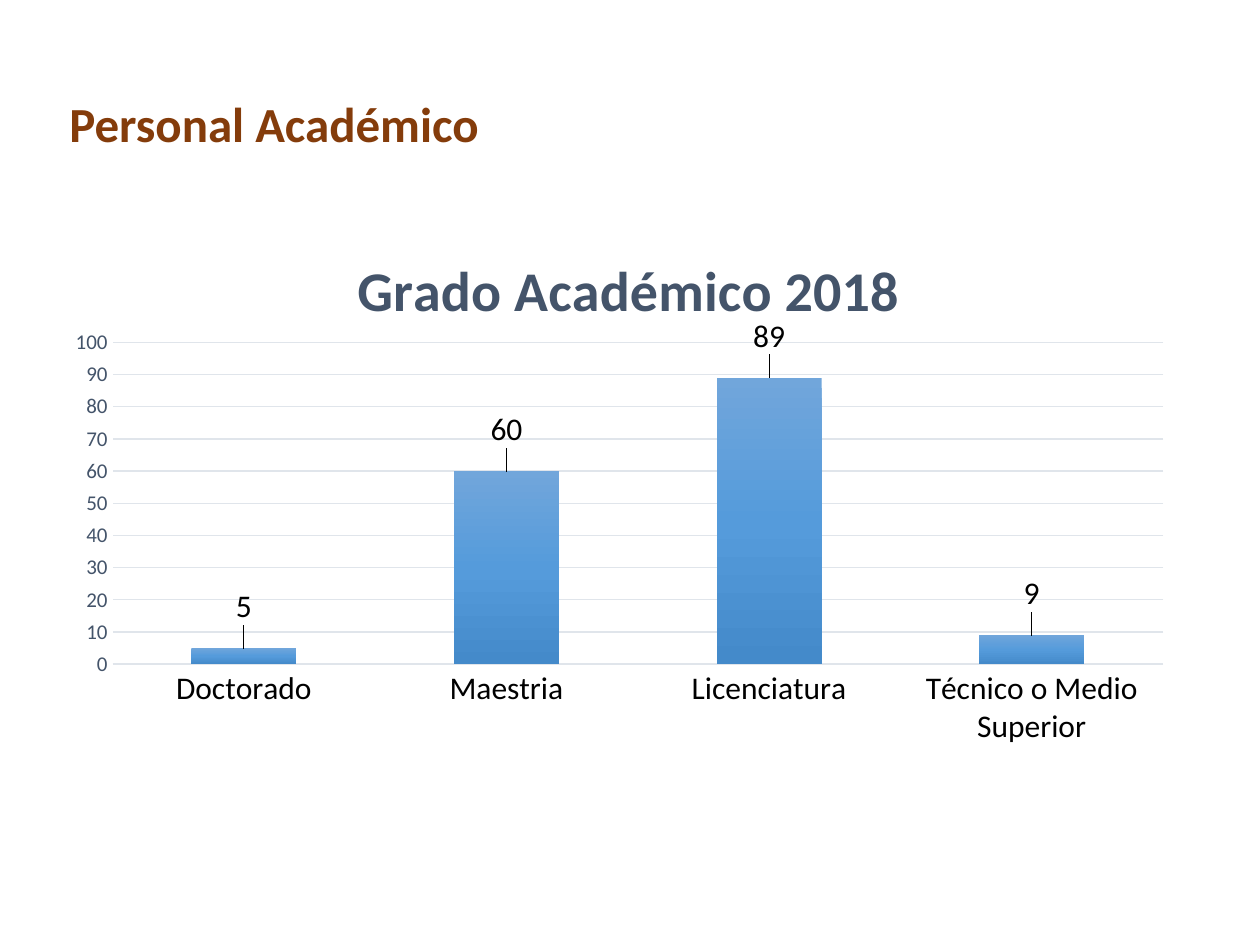
from dataclasses import dataclass

from lxml import etree
from pptx import Presentation
from pptx import util as u
from pptx.chart.data import CategoryChartData
from pptx.dml.color import RGBColor
from pptx.enum import chart as ch, text
from pptx.oxml import parse_xml
from pptx.oxml.ns import nsdecls, qn


@dataclass(frozen=True)
class Theme:
    font: str = "Calibri"
    heading: str = "843C0B"
    slate: str = "44546A"
    ink: str = "000000"
    grid: str = "E0E5EB"
    bar_stops: tuple = ((0, "71A6DB"), (50, "559BDB"), (100, "448ACA"))
    heading_size: int = 28
    chart_title_size: int = 32
    label_size: int = 18
    scale_size: int = 12
    line_width: float = 0.75


def manual_layout(x, y, size=None, inner=False):
    """Chart layout element; places are fractions of the chart area."""
    layout = etree.Element(qn("c:layout"))
    manual = etree.SubElement(layout, qn("c:manualLayout"))
    values = []
    if inner:
        values.append(("layoutTarget", "inner"))
    if size or inner:
        values += [("xMode", "edge"), ("yMode", "edge")]
    values += [("x", x), ("y", y)]
    if inner:
        values += [("w", size[0]), ("h", size[1])]
    for tag, value in values:
        etree.SubElement(manual, qn(f"c:{tag}")).set("val", str(value))
    return layout


class SlideBuilder:
    def __init__(self, prs, theme):
        self.theme = theme
        self.slide = prs.slides.add_slide(prs.slide_layouts[5])

    def style(self, font, size, color, bold=False):
        font.name = self.theme.font
        font.size = u.Pt(size)
        font.bold = bold
        font.color.rgb = RGBColor.from_string(color)

    def rule(self, line):
        line.color.rgb = RGBColor.from_string(self.theme.grid)
        line.width = u.Pt(self.theme.line_width)

    def heading(self, words, left, top, width, height):
        heading = self.slide.shapes.title
        heading.left, heading.top = u.Inches(left), u.Inches(top)
        heading.width, heading.height = u.Inches(width), u.Inches(height)
        frame = heading.text_frame
        frame.text = words
        frame.word_wrap = True
        frame.auto_size = text.MSO_AUTO_SIZE.NONE
        frame.vertical_anchor = text.MSO_ANCHOR.TOP
        line = frame.paragraphs[0]
        line.alignment = text.PP_ALIGN.LEFT
        self.style(line.runs[0].font, self.theme.heading_size,
                   self.theme.heading, True)

    def column_chart(self, title, values, left, top, width, height):
        data = CategoryChartData()
        data.categories = list(values)
        data.add_series("Series 1", list(values.values()))
        chart = self.slide.shapes.add_chart(
            ch.XL_CHART_TYPE.COLUMN_CLUSTERED, u.Inches(left), u.Inches(top),
            u.Inches(width), u.Inches(height), data).chart
        self.style(chart.font, 10, self.theme.ink)
        chart.has_legend = False
        self.chart_title(chart, title)
        self.axes(chart)

        # Plot area
        plot_area = chart.plots[0]._element.getparent()
        for old in plot_area.findall(qn("c:layout")):
            plot_area.remove(old)
        plot_area.insert(0, manual_layout(0.05, 0.23, (0.94, 0.54), True))
        plot = chart.plots[0]
        plot.gap_width = 150
        plot.vary_by_categories = False
        self.bars(plot.series[0], len(values))

    def chart_title(self, chart, words):
        chart.has_title = True
        frame = chart.chart_title.text_frame
        frame.text = words
        self.style(frame.paragraphs[0].runs[0].font,
                   self.theme.chart_title_size, self.theme.slate, True)
        title = chart.chart_title._element
        for old in title.findall(qn("c:layout")):
            title.remove(old)
        title.find(qn("c:tx")).addnext(manual_layout(0.26, 0.06, size=True))
        chart.chart_title.include_in_layout = False

    def axes(self, chart):
        degrees, scale = chart.category_axis, chart.value_axis
        for axis in (degrees, scale):
            axis.major_tick_mark = axis.minor_tick_mark = ch.XL_TICK_MARK.NONE
        self.style(degrees.tick_labels.font, self.theme.label_size, self.theme.ink)
        self.rule(degrees.format.line)
        self.style(scale.tick_labels.font, self.theme.scale_size, self.theme.slate)
        scale.format.line.fill.background()
        scale.minimum_scale, scale.maximum_scale, scale.major_unit = 0, 100, 10
        self.rule(scale.major_gridlines.format.line)

    def bars(self, staff, count):
        # Vertical gradient with three stops
        staff.format.fill.gradient()
        stops = "".join(
            f'<a:gs pos="{pos * 1000}"><a:srgbClr val="{color}"/></a:gs>'
            for pos, color in self.theme.bar_stops)
        gradient = parse_xml(
            f'<a:gradFill {nsdecls("a")} rotWithShape="1"><a:gsLst>{stops}'
            '</a:gsLst><a:lin ang="5400000" scaled="0"/></a:gradFill>')
        old = staff._element.find(".//" + qn("a:gradFill"))
        old.getparent().replace(old, gradient)

        # Value labels, raised a little above the bars
        staff.data_labels.show_value = True
        self.style(staff.data_labels.font, self.theme.label_size, self.theme.ink)
        for index in range(count):
            label = staff.points[index].data_label
            label.position = ch.XL_LABEL_POSITION.OUTSIDE_END
            self.style(label.font, self.theme.label_size, self.theme.ink)
        for label in staff._element.iter(qn("c:dLbl")):
            label.find(qn("c:idx")).addnext(manual_layout(0, -0.03))


def main():
    prs = Presentation()
    prs.slide_width, prs.slide_height = u.Inches(10), u.Inches(7.5)
    page = SlideBuilder(prs, Theme())
    page.heading("Personal Académico", 0.45, 0.69, 5.96, 0.57)
    degrees = {"Doctorado": 5, "Maestria": 60, "Licenciatura": 89,
               "Técnico o Medio Superior": 9}
    page.column_chart("Grado Académico 2018", degrees, 0.45, 1.63, 8.87, 4.73)
    prs.save("out.pptx")


if __name__ == "__main__":
    main()
